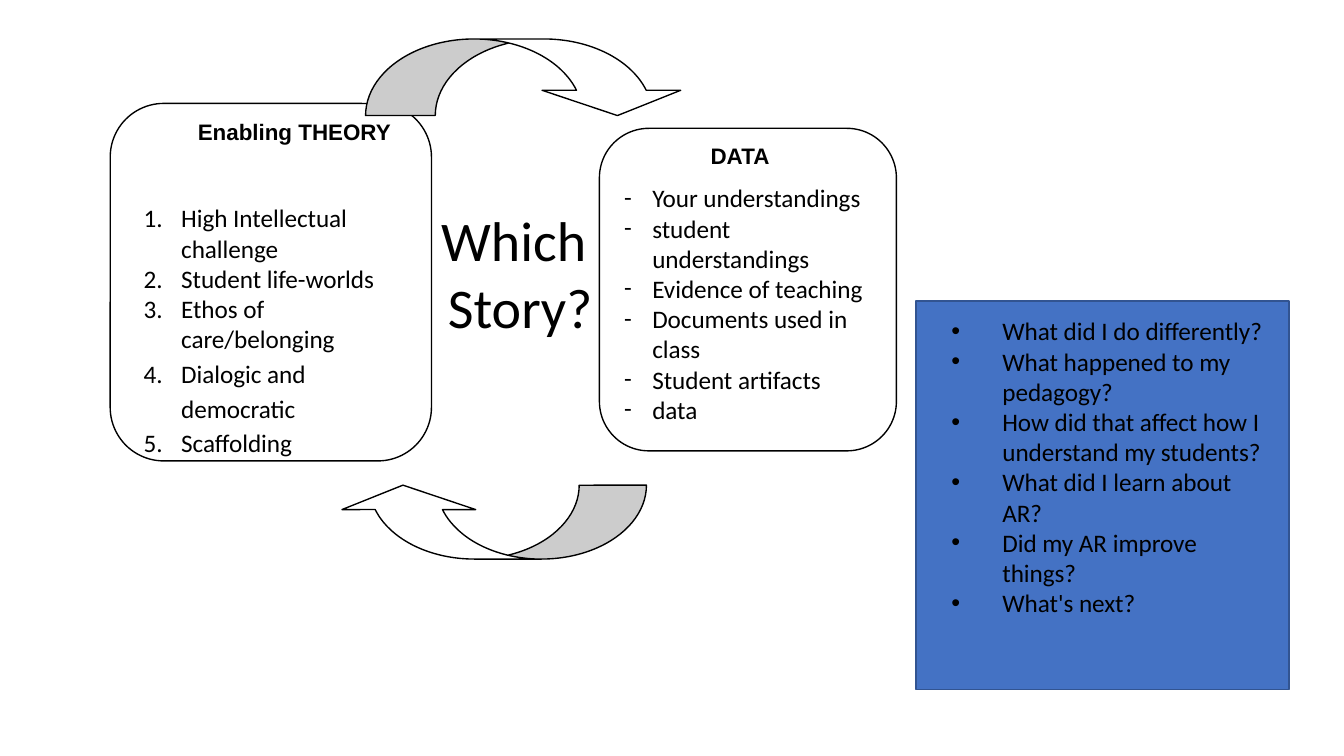
import pptx
import pptx.dml.color
import pptx.enum.shapes
import pptx.enum.text
import pptx.oxml.ns
import pptx.util
from lxml import etree

BLACK = pptx.dml.color.RGBColor(0x00, 0x00, 0x00)
WHITE = pptx.dml.color.RGBColor(0xFF, 0xFF, 0xFF)
BLUE = pptx.dml.color.RGBColor(0x44, 0x72, 0xC4)
DARK_BLUE = pptx.dml.color.RGBColor(0x32, 0x54, 0x91)

SHAPES = pptx.enum.shapes.MSO_SHAPE
ALIGN = pptx.enum.text.PP_ALIGN

deck = pptx.Presentation()
deck.slide_width = pptx.util.Inches(10)
deck.slide_height = deck.slide_width * 9 // 16
slide = deck.slides.add_slide(deck.slide_layouts[6])

# Square grid: 100 columns across the slide, rows of the same size
CELL = deck.slide_width / 100


def add_outlined(kind, place, fill, line, weight):
    shape = slide.shapes.add_shape(kind, *[round(n * CELL) for n in place])
    shape.shadow.inherit = False
    shape.fill.solid()
    shape.fill.fore_color.rgb = fill
    shape.line.color.rgb = line
    shape.line.width = pptx.util.Pt(weight)
    return shape


def add_text(place, lines, size, left=0, hanging=0, markers=(), align=ALIGN.LEFT):
    """Add a text box; markers are (tag, attributes) pairs for a hanging list."""
    box = slide.shapes.add_textbox(*[round(n * CELL) for n in place])
    frame = box.text_frame
    frame.word_wrap = True
    frame.auto_size = pptx.enum.text.MSO_AUTO_SIZE.SHAPE_TO_FIT_TEXT
    frame.text = "\n".join(lines)
    for paragraph in frame.paragraphs:
        paragraph.alignment = align
        properties = paragraph._p.get_or_add_pPr()
        properties.set("marL", str(round(left * CELL)))
        properties.set("indent", str(round(-hanging * CELL)))
        for tag, attributes in markers:
            etree.SubElement(properties, pptx.oxml.ns.qn(tag), attributes)
        for run in paragraph.runs:
            run.font.size = pptx.util.Pt(size)
            run.font.name = "Calibri"
            run.font.color.rgb = BLACK
    return frame


add_outlined(SHAPES.RECTANGLE, (68.15, 22.4, 27.75, 28.9), BLUE, DARK_BLUE, 1)

# Theory and data cards, each with an indented heading
for heading, place, indent in [
    ("Enabling THEORY", (8.2, 7.7, 23.9, 26.6), 4.65),
    ("DATA", (44.6, 9.55, 22.1, 24), 6.5),
]:
    card = add_outlined(SHAPES.FLOWCHART_ALTERNATE_PROCESS, place, WHITE, BLACK, 0.75)
    frame = card.text_frame
    frame.margin_left = frame.margin_right = round(0.7 * CELL)
    frame.margin_top = frame.margin_bottom = round(0.4 * CELL)
    frame.vertical_anchor = pptx.enum.text.MSO_ANCHOR.TOP
    frame.text = heading
    title = frame.paragraphs[0]
    title.alignment = ALIGN.JUSTIFY
    title.line_spacing = pptx.util.Pt(11.2)
    title._p.get_or_add_pPr().set("marL", str(round(indent * CELL)))
    title.runs[0].font.size = pptx.util.Pt(12)
    title.runs[0].font.name = "Arial"
    title.runs[0].font.bold = True
    title.runs[0].font.color.rgb = BLACK

# Curved arrows closing the cycle between the cards
for place, rotation in [((27.2, 2.9, 23.9, 5.7), 0), ((25, 36.1, 23.1, 5.5), 180)]:
    arrow = add_outlined(SHAPES.CURVED_DOWN_ARROW, place, WHITE, BLACK, 0.75)
    arrow.rotation = rotation
    for index, value in enumerate((0.91, 1.81, 0.33)):
        arrow.adjustments[index] = value

add_text(
    (45.35, 13.1, 21.9, 21.5),
    [
        "Your understandings",
        "student understandings",
        "Evidence of teaching",
        "Documents used in class",
        "Student artifacts",
        "data",
    ],
    13.5, 2.2, 2.1,
    [("a:buFont", {"typeface": "Calibri"}), ("a:buChar", {"char": "-"})],
)

theory = add_text(
    (9.7, 14.6, 20.7, 22.5),
    [
        "High Intellectual challenge",
        "Student life-worlds",
        "Ethos of care/belonging",
        "Dialogic and democratic",
        "Scaffolding",
    ],
    13.5, 2.8, 2.8,
    [("a:buAutoNum", {"type": "arabicPeriod"})],
)
for paragraph in theory.paragraphs[3:]:
    paragraph.line_spacing = 1.15

add_text((31.3, 14.8, 14.8, 11.1), ["Which ", "Story?"], 30, align=ALIGN.CENTER)

add_text(
    (69.8, 23, 25.2, 28.3),
    [
        "What did I do differently?",
        "What happened to my pedagogy?",
        "How did that affect how I understand my students?",
        "What did I learn about AR?",
        "Did my AR improve things?",
        "What's next?",
    ],
    13.5, 3.8, 3.8,
    [("a:buFont", {"typeface": "Arial"}), ("a:buChar", {"char": "•"})],
)

deck.save("out.pptx")
